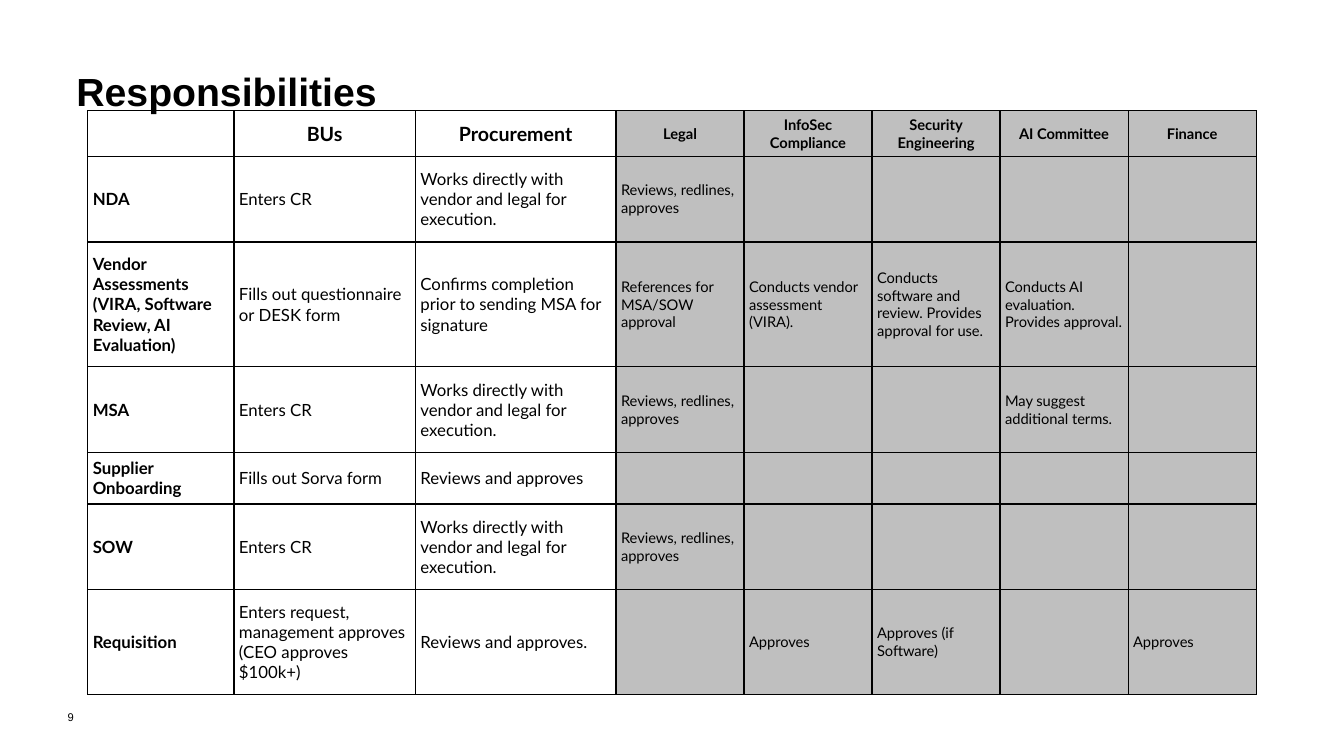
from lxml.etree import SubElement
from pptx import Presentation
from pptx.dml.color import RGBColor
from pptx.enum.text import MSO_ANCHOR as Anchor, PP_ALIGN as Align
from pptx.oxml.ns import qn
from pptx.util import Inches, Pt

BLACK = RGBColor(0, 0, 0)
WHITE = RGBColor(255, 255, 255)
GRAY = RGBColor(0xBF, 0xBF, 0xBF)

TITLE = "Responsibilities"
PAGE_NUMBER = "9"
EXECUTION = "Works directly with vendor and legal for execution."
LEGAL_REVIEW = "Reviews, redlines, approves"
ROWS = [
    ["", "BUs", "Procurement", "Legal", "InfoSec Compliance",
     "Security\nEngineering", "AI Committee", "Finance"],
    ["NDA", "Enters CR", EXECUTION, LEGAL_REVIEW, "", "", "", ""],
    ["Vendor Assessments (VIRA, Software Review, AI Evaluation)",
     "Fills out questionnaire or DESK form",
     "Confirms completion prior to sending MSA for signature",
     "References for MSA/SOW approval",
     "Conducts vendor assessment (VIRA).",
     "Conducts software and review. Provides approval for use.",
     "Conducts AI evaluation. Provides approval.", ""],
    ["MSA", "Enters CR", EXECUTION, LEGAL_REVIEW, "", "",
     "May suggest additional terms.", ""],
    ["Supplier Onboarding", "Fills out Sorva form", "Reviews and approves",
     "", "", "", "", ""],
    ["SOW", "Enters CR", EXECUTION, LEGAL_REVIEW, "", "", "", ""],
    ["Requisition",
     "Enters request, management approves (CEO approves $100k+)",
     "Reviews and approves.", "", "Approves", "Approves (if Software)", "",
     "Approves"],
]
COLUMN_WIDTHS = [1.45, 1.8, 1.99] + [1.27] * 5
ROW_HEIGHTS = [0.45, 0.85, 1.24, 0.85, 0.51, 0.85, 1.04]
FIRST_GRAY_COLUMN = 3
CELL_MARGIN = Inches(0.05)


def style(para, size, name, bold=False):
    font = para.font
    font.size, font.name, font.bold = Pt(size), name, bold
    font.color.rgb = BLACK


def add_text(page, text, left, top, width, height, size, bold=False):
    box = page.shapes.add_textbox(*map(Inches, (left, top, width, height)))
    frame = box.text_frame
    frame.word_wrap = True
    frame.text = text
    style(frame.paragraphs[0], size, "Arial", bold)
    return frame


def add_borders(cell):
    properties = cell._tc.get_or_add_tcPr()
    for position, side in enumerate(("a:lnL", "a:lnR", "a:lnT", "a:lnB")):
        line = SubElement(properties, qn(side), w=str(Pt(1)))
        fill = SubElement(line, qn("a:solidFill"))
        SubElement(fill, qn("a:srgbClr"), val=str(BLACK))
        properties.insert(position, line)


def fill_cell(cell, text, row, column):
    gray = column >= FIRST_GRAY_COLUMN
    header = row == 0
    cell.fill.solid()
    cell.fill.fore_color.rgb = GRAY if gray else WHITE
    cell.margin_left = cell.margin_right = CELL_MARGIN
    cell.margin_top = cell.margin_bottom = CELL_MARGIN
    cell.vertical_anchor = Anchor.MIDDLE
    cell.text = text
    size = 10.5 if gray else 14 if header else 12
    for para in cell.text_frame.paragraphs:
        para.alignment = Align.CENTER if header else Align.LEFT
        style(para, size, "Lato", header or column == 0)
    add_borders(cell)


def add_responsibilities(page):
    table = page.shapes.add_table(
        len(ROWS), len(COLUMN_WIDTHS), Inches(0.87), Inches(1.1),
        Inches(sum(COLUMN_WIDTHS)), Inches(sum(ROW_HEIGHTS))).table
    for column, width in zip(table.columns, COLUMN_WIDTHS):
        column.width = Inches(width)
    for row, height in zip(table.rows, ROW_HEIGHTS):
        row.height = Inches(height)
    for row, texts in enumerate(ROWS):
        for column, text in enumerate(texts):
            fill_cell(table.cell(row, column), text, row, column)


def main():
    deck = Presentation()
    deck.slide_width, deck.slide_height = Inches(13.33), Inches(7.5)
    page = deck.slides.add_slide(deck.slide_layouts[6])
    number = add_text(page, PAGE_NUMBER, 0.67, 6.99, 0.3, 0.24, 8)
    number.margin_left = 0
    number.vertical_anchor = Anchor.MIDDLE
    add_responsibilities(page)
    add_text(page, TITLE, 0.66, 0.62, 6.67, 0.57, 28, bold=True)
    deck.save("out.pptx")


if __name__ == "__main__":
    main()
